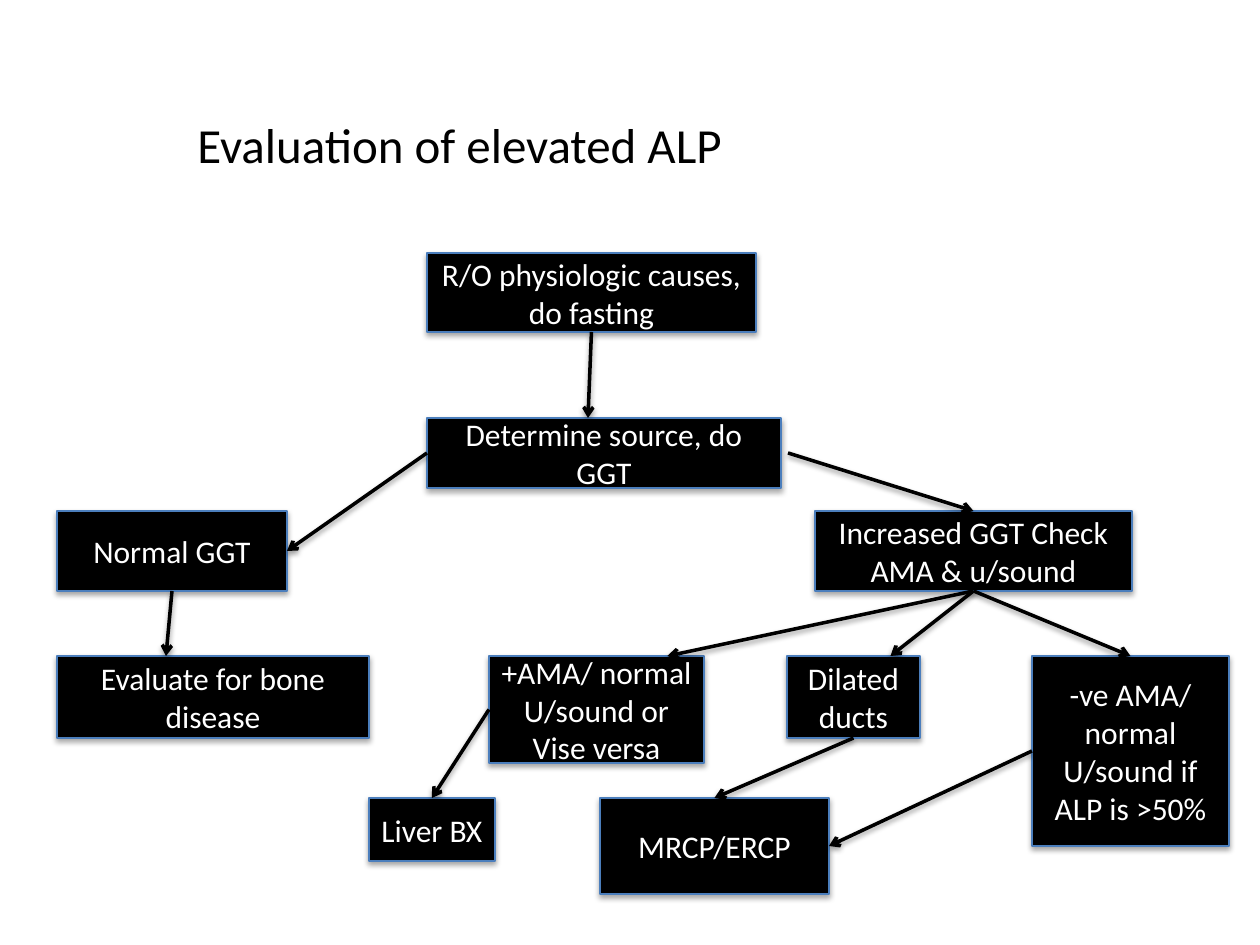
import pptx
import pptx.util
import pptx.dml.color
import pptx.enum.shapes
import pptx.enum.text
import pptx.oxml
import pptx.oxml.ns
from lxml import etree

PX = 914400 / 126
FONT = "Calibri"
COLORS = {"black": "000000", "white": "FFFFFF", "border": "4B7EBC"}

# name: (text, left, top, width, height)
BOXES = {
    "causes": ("R/O physiologic causes, do fasting", 427, 253, 329, 79),
    "source": ("Determine source, do GGT", 427, 418, 354, 70),
    "normal": ("Normal GGT", 57, 511, 230, 80),
    "increased": ("Increased GGT Check AMA & u/sound", 815, 511, 317, 80),
    "bone": ("Evaluate for bone disease", 57, 656, 312, 82),
    "positive": ("+AMA/ normal U/sound or Vise versa", 489, 656, 215, 107),
    "dilated": ("Dilated ducts", 787, 656, 133, 82),
    "negative": ("-ve AMA/ normal U/sound if ALP is >50%", 1032, 656, 197, 190),
    "biopsy": ("Liver BX", 369, 798, 126, 63),
    "imaging": ("MRCP/ERCP", 600, 798, 229, 96),
}

# Each end: (box, side, horizontal shift from the middle of that side)
ARROWS = [
    (("causes", "bottom", 0), ("source", "top", -16)),
    (("source", "left", 0), ("normal", "right", 0)),
    (("normal", "bottom", 0), ("bone", "top", -47)),
    (("source", "right", 7), ("increased", "top", 0)),
    (("increased", "bottom", 0), ("positive", "top", 71)),
    (("increased", "bottom", 0), ("dilated", "top", 37)),
    (("increased", "bottom", 0), ("negative", "top", 0)),
    (("dilated", "bottom", 0), ("imaging", "top", 0)),
    (("positive", "left", 0), ("biopsy", "top", 0)),
    (("negative", "left", 0), ("imaging", "right", 46 - 46)),
]
SIDES = {"top": (0.5, 0), "bottom": (0.5, 1), "left": (0, 0.5), "right": (1, 0.5)}


def emu(*lengths):
    return [pptx.util.Emu(round(length * PX)) for length in lengths]


def color(name):
    return pptx.dml.color.RGBColor.from_string(COLORS[name])


def add_shadow(shape, distance, opacity):
    properties = shape._element.spPr
    for old in properties.findall(pptx.oxml.ns.qn("a:effectLst")):
        properties.remove(old)
    properties.append(pptx.oxml.parse_xml(
        f'<a:effectLst {pptx.oxml.ns.nsdecls("a")}>'
        f'<a:outerShdw blurRad="40000" dist="{distance}" dir="5400000" rotWithShape="0">'
        f'<a:srgbClr val="{COLORS["black"]}"><a:alpha val="{opacity * 1000}"/></a:srgbClr>'
        '</a:outerShdw></a:effectLst>'))


def add_run(paragraph, text, size, color_name):
    run = paragraph.add_run()
    run.text = text
    run.font.name = FONT
    run.font.size = pptx.util.Pt(size)
    run.font.color.rgb = color(color_name)


def add_box(slide, text, *bounds):
    shape = slide.shapes.add_shape(
        pptx.enum.shapes.MSO_SHAPE.RECTANGLE, *emu(*bounds))
    shape.fill.solid()
    shape.fill.fore_color.rgb = color("black")
    shape.line.color.rgb = color("border")
    shape.line.width = pptx.util.Pt(0.75)
    add_shadow(shape, 23000, 35)
    frame = shape.text_frame
    frame.word_wrap = True
    frame.vertical_anchor = pptx.enum.text.MSO_ANCHOR.MIDDLE
    paragraph = frame.paragraphs[0]
    paragraph.alignment = pptx.enum.text.PP_ALIGN.CENTER
    add_run(paragraph, text, 18, "white")


def side_point(name, side, shift):
    _, left, top, width, height = BOXES[name]
    across, down = SIDES[side]
    return left + width * across + shift, top + height * down


def add_arrow(slide, start, end):
    connector = slide.shapes.add_connector(
        pptx.enum.shapes.MSO_CONNECTOR.STRAIGHT,
        *emu(*side_point(*start), *side_point(*end)))
    connector.line.color.rgb = color("black")
    connector.line.width = pptx.util.Pt(2)
    etree.SubElement(connector.line._get_or_add_ln(),
                     pptx.oxml.ns.qn("a:tailEnd"), type="arrow")
    add_shadow(connector, 20000, 38)


def add_title(slide, text, *bounds):
    frame = slide.shapes.add_textbox(*emu(*bounds)).text_frame
    frame.word_wrap = True
    frame.auto_size = pptx.enum.text.MSO_AUTO_SIZE.SHAPE_TO_FIT_TEXT
    add_run(frame.paragraphs[0], text, 28, "black")


def main():
    presentation = pptx.Presentation()
    presentation.slide_width, presentation.slide_height = emu(1260, 945)
    slide = presentation.slides.add_slide(presentation.slide_layouts[6])

    # Steps of the flowchart
    for box in BOXES.values():
        add_box(slide, *box)

    # Links between the steps
    for start, end in ARROWS:
        add_arrow(slide, start, end)

    add_title(slide, "Evaluation of elevated ALP", 185, 108, 644, 72)
    presentation.save("out.pptx")


if __name__ == "__main__":
    main()
